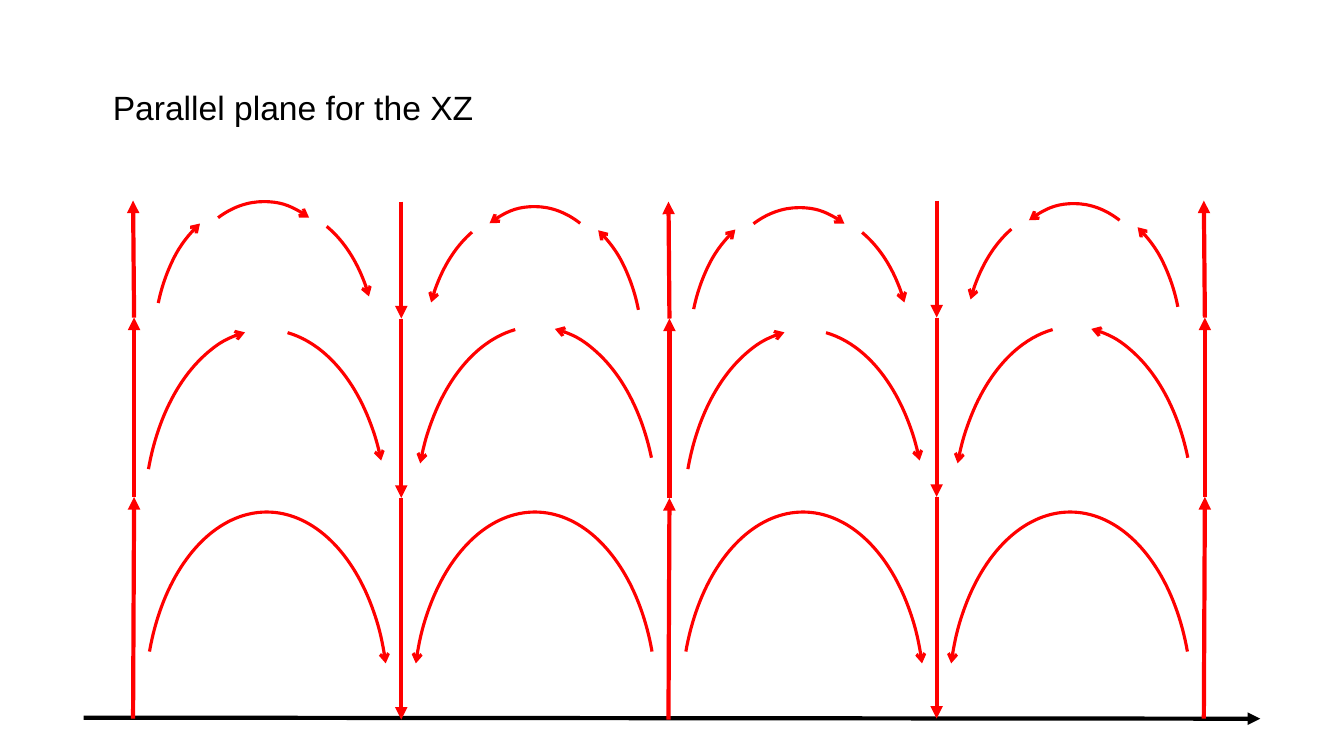
from pptx import Presentation
from pptx import util as u
from pptx.dml.color import RGBColor
from pptx.enum import shapes, text
from pptx.oxml.ns import qn
from lxml import etree

RED = RGBColor(0xFF, 0, 0)
BLACK = RGBColor(0, 0, 0)

# Content: lengths in inches
TITLE = "Parallel plane for the XZ"
AXIS = ((0.83, 7.12), (12.5, 7.13))

# Vertical flows: x, vertical shift, upward
FLOWS = [
    (1.32, 0, True),
    (3.98, 0.01, False),
    (6.63, 0.01, True),
    (9.29, 0, False),
    (11.94, 0, True),
]
LEVELS = [7.13, 4.93, 3.15, 1.99]
LEAN = [0, 0.01, 0.01, 0]  # sideways drift of upward flows

# Arc sweeps (start, end) by kind
SWEEPS = {
    "whole": (121.855, 205.341),
    "rise": (121.855, 158.219),
    "fall": (166.029, 199.883),
    "back rise": (124.07, 158.518),
    "back fall": (165.971, 201.403),
    "low": (121.855, 147.788),
    "crest": (150.033, 173.947),
    "end": (175.037, 197.959),
}
BIG, SMALL, SLIM = (2.41, 3.76), (1.95, 2.81), (1.91, 2.81)

# Arcs of each cell: size, mirrored, {kind: (left, top)}
CELLS = [
    (BIG, False, {"whole": (1.44, 5.08), "rise": (1.43, 3.27), "fall": (1.43, 3.27)}),
    (BIG, True, {"whole": (4.1, 5.08), "back rise": (4.11, 3.24), "back fall": (4.12, 3.24)}),
    (BIG, False, {"whole": (6.76, 5.08), "rise": (6.78, 3.27), "fall": (6.77, 3.27)}),
    (BIG, True, {"whole": (9.41, 5.08), "back rise": (9.43, 3.24), "back fall": (9.45, 3.24)}),
    (SMALL, False, {"low": (1.53, 2), "crest": (1.64, 2), "end": (1.78, 2.06)}),
    (SLIM, True, {"low": (4.46, 2.06), "crest": (4.35, 2.05), "end": (4.21, 2.11)}),
    (SMALL, False, {"low": (6.84, 2.06), "crest": (6.95, 2.06), "end": (7.09, 2.12)}),
    (SLIM, True, {"low": (9.81, 2.03), "crest": (9.7, 2.02), "end": (9.56, 2.08)}),
]

deck = Presentation()
deck.slide_width, deck.slide_height = u.Inches(13.33), u.Inches(7.5)
slide = deck.slides.add_slide(deck.slide_layouts[6])


def stroke(item, color, width, head):
    item.line.color.rgb = color
    item.line.width = u.Pt(width)
    etree.SubElement(item.line._get_or_add_ln(), qn("a:tailEnd"), type=head)


def arrow(start, end, color=RED):
    line = slide.shapes.add_connector(
        shapes.MSO_CONNECTOR.STRAIGHT, *map(u.Inches, (*start, *end)))
    stroke(line, color, 3, "triangle")
    etree.SubElement(line._element.spPr, qn("a:effectLst"))


def arc(spot, size, sweep, mirror):
    curve = slide.shapes.add_shape(
        shapes.MSO_SHAPE.ARC, *map(u.Inches, (*spot, *size)))
    curve.adjustments[0], curve.adjustments[1] = sweep
    curve.fill.background()
    stroke(curve, RED, 2.25, "arrow")
    curve.shadow.inherit = False
    if mirror:
        curve._element.spPr.find(qn("a:xfrm")).set("flipH", "1")


def label(words, box, size=24, font="Arial", color=BLACK):
    frame = slide.shapes.add_textbox(*map(u.Inches, box)).text_frame
    frame.word_wrap = True
    frame.auto_size = text.MSO_AUTO_SIZE.SHAPE_TO_FIT_TEXT
    run = frame.paragraphs[0].add_run()
    run.text = words
    run.font.size, run.font.name = u.Pt(size), font
    run.font.color.rgb = color


# Axis
arrow(*AXIS, color=BLACK)

# Vertical flows, each a chain of arrows
for x, shift, upward in FLOWS:
    stops = [(x + lean * upward, y + shift) for y, lean in zip(LEVELS, LEAN)]
    if not upward:
        stops.reverse()
    for start, end in zip(stops, stops[1:]):
        arrow(start, end)

# Curved flows
for size, mirror, arcs in CELLS:
    for kind, spot in arcs.items():
        arc(spot, size, SWEEPS[kind], mirror)

# Title
label(TITLE, (1.02, 0.81, 11.48, 0.5))

deck.save("out.pptx")
